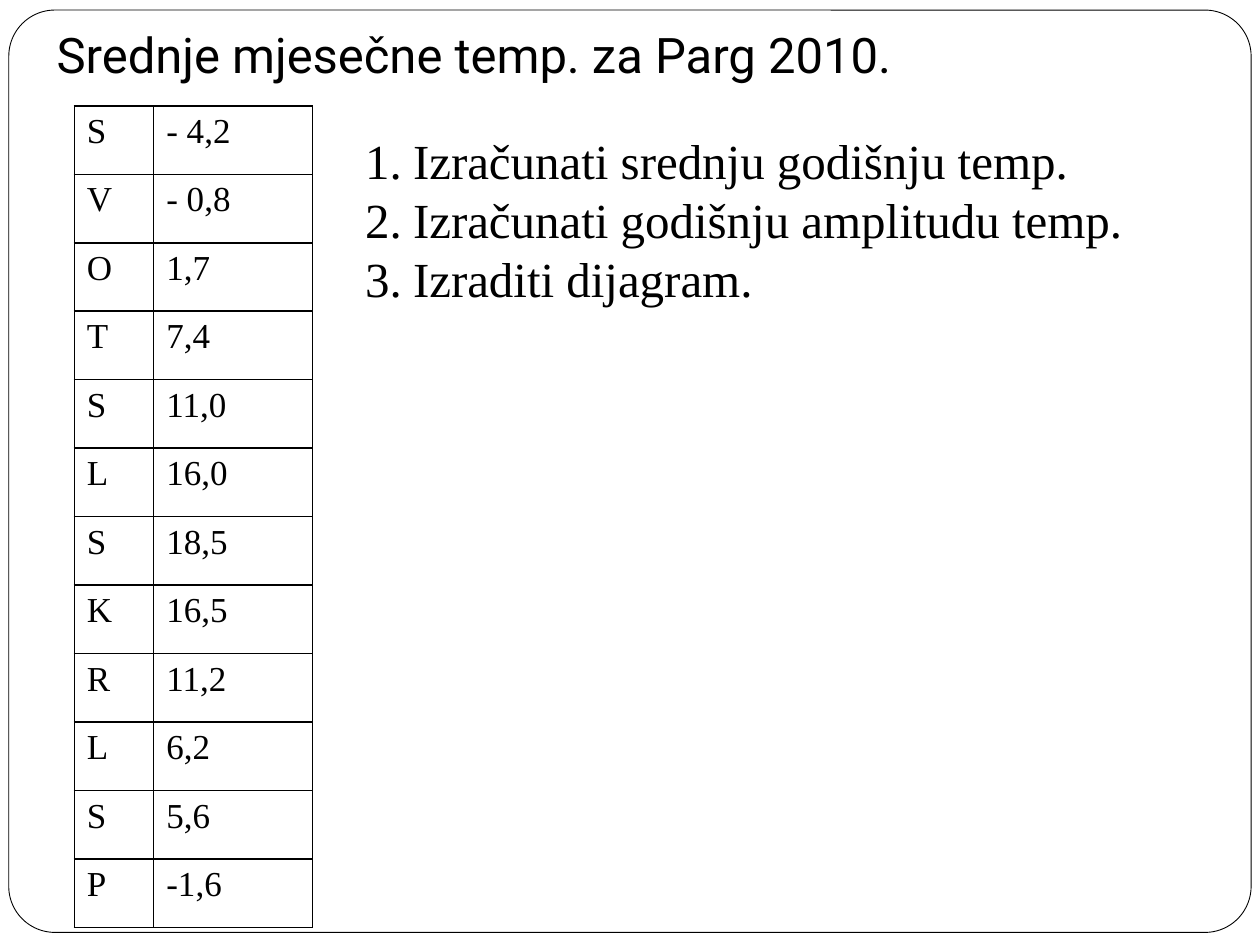
from typing import NamedTuple

from lxml import etree
from pptx import Presentation
from pptx.dml.color import RGBColor
from pptx.enum.shapes import MSO_SHAPE
from pptx.enum.text import MSO_ANCHOR, MSO_AUTO_SIZE, PP_ALIGN
from pptx.oxml.ns import qn
from pptx.util import Emu, Pt

ROUNDED = MSO_SHAPE.ROUNDED_RECTANGLE
BOTTOM = MSO_ANCHOR.BOTTOM
LEFT = PP_ALIGN.LEFT
NO_AUTOFIT = MSO_AUTO_SIZE.NONE
GROW = MSO_AUTO_SIZE.SHAPE_TO_FIT_TEXT

EMU_PER_PX = 9144  # 100 px to the inch
TITLE_ONLY = 5
BLACK, WHITE = "000000", "FFFFFF"
SANS, SERIF = "Roboto", "Times New Roman"


class Box(NamedTuple):
    left: int
    top: int
    width: int
    height: int


class Month(NamedTuple):
    initial: str
    temperature: str


FRAME = Box(7, 8, 986, 732)
TITLE = Box(35, 13, 915, 63)
TABLE = Box(59, 84, 189, 652)
TASK_LIST = Box(280, 99, 654, 151)
COLUMN_WIDTHS = (63, 126)
NUMBER_INDENT = 38

MONTHS = [
    Month("S", "- 4,2"),
    Month("V", "- 0,8"),
    Month("O", "1,7"),
    Month("T", "7,4"),
    Month("S", "11,0"),
    Month("L", "16,0"),
    Month("S", "18,5"),
    Month("K", "16,5"),
    Month("R", "11,2"),
    Month("L", "6,2"),
    Month("S", "5,6"),
    Month("P", "-1,6"),
]
TASKS = [
    "Izračunati srednju godišnju temp.",
    "Izračunati godišnju amplitudu temp.",
    "Izraditi dijagram.",
]


def px(n: int) -> Emu:
    return Emu(n * EMU_PER_PX)


def place(box: Box) -> list[Emu]:
    return [px(n) for n in box]


def color(value: str) -> RGBColor:
    return RGBColor.from_string(value)


def add_run(p, text: str, size: int, font: str) -> None:
    r = p.add_run()
    r.text = text
    r.font.size = Pt(size)
    r.font.name = font
    r.font.color.rgb = color(BLACK)


def add_title(s, text: str) -> None:
    sp = s.shapes.title
    sp.left, sp.top, sp.width, sp.height = place(TITLE)
    tf = sp.text_frame
    tf.auto_size = NO_AUTOFIT
    tf.vertical_anchor = BOTTOM
    tf.margin_bottom = px(10)
    p = tf.paragraphs[0]
    p.alignment = LEFT
    add_run(p, text, 28, SANS)


def add_frame(s) -> None:
    """Draw the rounded page border behind the title."""
    sp = s.shapes.add_shape(ROUNDED, *place(FRAME))
    sp.adjustments[0] = 0.05
    sp.shadow.inherit = False
    sp.fill.solid()
    sp.fill.fore_color.rgb = color(WHITE)
    sp.line.color.rgb = color(BLACK)
    sp.line.width = Pt(0.5)
    s.shapes.title.element.addprevious(sp.element)


def add_borders(cell) -> None:
    tc_pr = cell._tc.get_or_add_tcPr()
    for side in ("lnL", "lnR", "lnT", "lnB"):
        ln = etree.SubElement(tc_pr, qn(f"a:{side}"), w=str(Pt(1)))
        fill = etree.SubElement(ln, qn("a:solidFill"))
        etree.SubElement(fill, qn("a:srgbClr"), val=BLACK)


def add_temperatures(s, months: list[Month]) -> None:
    table = s.shapes.add_table(len(months), len(COLUMN_WIDTHS), *place(TABLE)).table
    table.first_row = table.horz_banding = False
    for column, width in zip(table.columns, COLUMN_WIDTHS):
        column.width = px(width)
    for row, month in zip(table.rows, months):
        row.height = Emu(px(TABLE.height) // len(months))
        for cell, text in zip(row.cells, month):
            add_borders(cell)
            cell.fill.background()
            add_run(cell.text_frame.paragraphs[0], text, 20, SERIF)


def number(p) -> None:
    """Give the paragraph an automatic number with a hanging indent."""
    p_pr = p._p.get_or_add_pPr()
    p_pr.set("marL", str(px(NUMBER_INDENT)))
    p_pr.set("indent", str(px(-NUMBER_INDENT)))
    etree.SubElement(p_pr, qn("a:buFont"), typeface=SERIF)
    etree.SubElement(p_pr, qn("a:buAutoNum"), type="arabicPeriod")


def add_tasks(s, tasks: list[str]) -> None:
    tf = s.shapes.add_textbox(*place(TASK_LIST)).text_frame
    tf.word_wrap = True
    tf.auto_size = GROW
    for i, task in enumerate(tasks):
        p = tf.add_paragraph() if i else tf.paragraphs[0]
        number(p)
        add_run(p, task, 28, SERIF)


def main() -> None:
    prs = Presentation()
    prs.slide_width, prs.slide_height = px(1000), px(750)
    s = prs.slides.add_slide(prs.slide_layouts[TITLE_ONLY])
    add_frame(s)
    add_title(s, "Srednje mjesečne temp. za Parg 2010.")
    add_temperatures(s, MONTHS)
    add_tasks(s, TASKS)
    prs.save("out.pptx")


if __name__ == "__main__":
    main()
